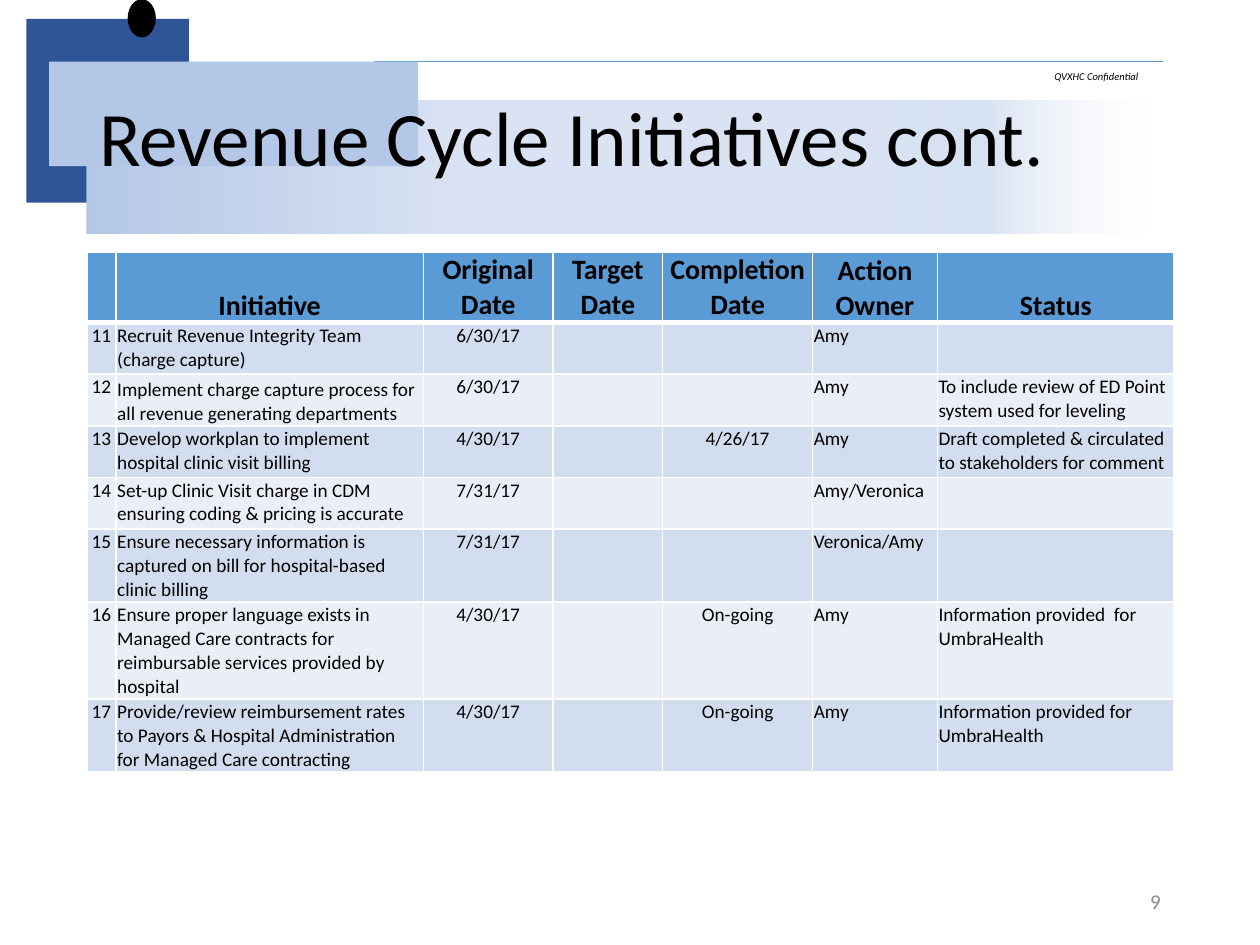
from typing import NamedTuple

from lxml import etree
from pptx import Presentation
from pptx.dml.color import RGBColor
from pptx.enum.shapes import MSO_CONNECTOR, MSO_SHAPE
from pptx.enum.text import MSO_ANCHOR, PP_ALIGN
from pptx.oxml import parse_xml
from pptx.oxml.ns import nsdecls, qn
from pptx.util import Inches, Pt

RECT, OVAL = MSO_SHAPE.RECTANGLE, MSO_SHAPE.OVAL
LEFT, CENTER, RIGHT = PP_ALIGN.LEFT, PP_ALIGN.CENTER, PP_ALIGN.RIGHT
TOP, MIDDLE, BOTTOM = MSO_ANCHOR.TOP, MSO_ANCHOR.MIDDLE, MSO_ANCHOR.BOTTOM

FONT = "Calibri"
COLORS = {
    "black": "000000", "white": "FFFFFF", "navy": "2F5597", "periwinkle": "B4C7E7",
    "pale": "DAE3F3", "mist": "D6E1F2", "header": "5B9BD5",
    "band_dark": "D2DEEF", "band_light": "EAEFF7", "gray": "8C8C8C",
}
# Position in percent, colour, opacity in percent
BANNER_STOPS = [(0, "white", 0), (17, "mist", 100), (39, "pale", 100),
                (65, "pale", 100), (100, "periwinkle", 100)]


class Block(NamedTuple):
    kind: MSO_SHAPE
    box: tuple[float, float, float, float]
    color: str


class Label(NamedTuple):
    text: str
    box: tuple[float, float, float, float]
    size: float
    color: str = "black"
    align: PP_ALIGN = LEFT
    anchor: MSO_ANCHOR = TOP
    italic: bool = False
    spacing: float = 1.0


class Column(NamedTuple):
    title: str
    width: float
    align: PP_ALIGN
    title_anchor: MSO_ANCHOR


class Initiative(NamedTuple):
    number: str
    name: str
    original: str
    target: str
    completion: str
    owner: str
    status: str


NAVY_SQUARE = Block(RECT, (0.21, 0.15, 1.29, 1.46), "navy")
DOT = Block(OVAL, (1.02, 0, 0.21, 0.29), "black")
BANNER = Block(RECT, (0.69, 0.8, 8.57, 1.05), "pale")
OVERLAY = Block(RECT, (0.39, 0.49, 2.93, 0.83), "periwinkle")

LABELS = [
    Label("QVXHC Confidential", (8.27, 0.5, 1.05, 0.33), 6, italic=True, spacing=1.07),
    Label("Revenue Cycle Initiatives cont.", (0.69, 0.4, 8.62, 1.45), 44,
          anchor=MIDDLE, spacing=0.9),
    Label("9", (7.06, 6.95, 2.25, 0.4), 12, "gray", RIGHT, MIDDLE),
]
COLUMNS = [
    Column("", 0.23, CENTER, TOP),
    Column("Initiative", 2.44, LEFT, BOTTOM),
    Column("Original Date", 1.03, CENTER, TOP),
    Column("Target Date", 0.87, CENTER, TOP),
    Column("Completion Date", 1.19, CENTER, TOP),
    Column("Action Owner", 0.99, LEFT, BOTTOM),
    Column("Status", 1.88, LEFT, BOTTOM),
]
ROW_HEIGHTS = [0.56, 0.41, 0.41, 0.41, 0.41, 0.58, 0.77, 0.58]
INITIATIVES = [
    Initiative("11", "Recruit Revenue Integrity Team (charge capture)",
               "6/30/17", "", "", "Amy", ""),
    Initiative("12", "Implement charge capture process for all revenue generating departments",
               "6/30/17", "", "", "Amy",
               "To include review of ED Point system used for leveling"),
    Initiative("13", "Develop workplan to implement hospital clinic visit billing",
               "4/30/17", "", "4/26/17", "Amy",
               "Draft completed & circulated to stakeholders for comment"),
    Initiative("14", "Set-up Clinic Visit charge in CDM ensuring coding & pricing is accurate",
               "7/31/17", "", "", "Amy/Veronica", ""),
    Initiative("15", "Ensure necessary information is captured on bill for hospital-based "
               "clinic billing", "7/31/17", "", "", "Veronica/Amy", ""),
    Initiative("16", "Ensure proper language exists in Managed Care contracts for "
               "reimbursable services provided by hospital",
               "4/30/17", "", "On-going", "Amy", "Information provided  for UmbraHealth"),
    Initiative("17", "Provide/review reimbursement rates to Payors & Hospital Administration "
               "for Managed Care contracting",
               "4/30/17", "", "On-going", "Amy", "Information provided for UmbraHealth"),
]


def rgb(name: str) -> RGBColor:
    return RGBColor.from_string(COLORS[name])


def style_paragraph(p, size: float, color: str, align: PP_ALIGN) -> None:
    p.alignment = align
    p.font.name = FONT
    p.font.size = Pt(size)
    p.font.color.rgb = rgb(color)


def add_block(slide, block: Block):
    s = slide.shapes.add_shape(block.kind, *map(Inches, block.box))
    s.shadow.inherit = False
    s.fill.solid()
    s.fill.fore_color.rgb = rgb(block.color)
    s.line.fill.background()
    return s


def fade_banner(s) -> None:
    """Replace the solid fill by one that fades out towards the right."""
    stops = "".join(
        f'<a:gs pos="{pos * 1000}"><a:srgbClr val="{COLORS[color]}">'
        f'<a:alpha val="{opacity * 1000}"/></a:srgbClr></a:gs>'
        for pos, color, opacity in BANNER_STOPS)
    gradient = parse_xml(f'<a:gradFill {nsdecls("a")}><a:gsLst>{stops}</a:gsLst>'
                         '<a:lin ang="10800000" scaled="0"/></a:gradFill>')
    props = s._element.spPr
    props.replace(props.find(qn("a:solidFill")), gradient)


def add_rule(slide) -> None:
    s = slide.shapes.add_connector(MSO_CONNECTOR.STRAIGHT, Inches(2.97), Inches(0.49),
                                   Inches(9.23), Inches(0.49))
    s.line.color.rgb = rgb("header")
    s.line.width = Pt(0.5)
    etree.SubElement(s._element.spPr, qn("a:effectLst"))


def add_label(slide, label: Label) -> None:
    tf = slide.shapes.add_textbox(*map(Inches, label.box)).text_frame
    tf.word_wrap = True
    tf.vertical_anchor = label.anchor
    p = tf.paragraphs[0]
    p.text = label.text
    p.line_spacing = label.spacing
    style_paragraph(p, label.size, label.color, label.align)
    p.font.italic = label.italic


def set_borders(cell, bottom: float) -> None:
    """White edges; they must stand before the fill in the cell properties."""
    edges = {"lnL": 1, "lnR": 1, "lnT": 1, "lnB": bottom}
    for i, (tag, width) in enumerate(edges.items()):
        cell._tc.get_or_add_tcPr().insert(i, parse_xml(
            f'<a:{tag} {nsdecls("a")} w="{Pt(width)}"><a:solidFill>'
            f'<a:srgbClr val="{COLORS["white"]}"/></a:solidFill></a:{tag}>'))


def fill_cell(cell, text: str, fill: str, size: float, align: PP_ALIGN,
              anchor: MSO_ANCHOR, header: bool) -> None:
    cell.fill.solid()
    cell.fill.fore_color.rgb = rgb(fill)
    cell.margin_left = cell.margin_right = cell.margin_top = Inches(0.01)
    cell.margin_bottom = 0
    cell.vertical_anchor = anchor
    p = cell.text_frame.paragraphs[0]
    p.text = text
    style_paragraph(p, size, "black", align)
    p.font.bold = header
    set_borders(cell, 3 if header else 1)


def add_initiatives(slide) -> None:
    width = sum(c.width for c in COLUMNS)
    table = slide.shapes.add_table(len(ROW_HEIGHTS), len(COLUMNS), Inches(0.69), Inches(2),
                                   Inches(width), Inches(sum(ROW_HEIGHTS))).table
    for row, height in zip(table.rows, ROW_HEIGHTS):
        row.height = Inches(height)
    for c, column in enumerate(COLUMNS):
        table.columns[c].width = Inches(column.width)
        fill_cell(table.cell(0, c), column.title, "header", 16, CENTER,
                  column.title_anchor, True)
        for r, item in enumerate(INITIATIVES, 1):
            fill = "band_dark" if r % 2 else "band_light"
            anchor = BOTTOM if (item.number, c) == ("12", 1) else TOP
            fill_cell(table.cell(r, c), item[c], fill, 11, column.align, anchor, False)


def main() -> None:
    prs = Presentation()
    prs.slide_width, prs.slide_height = Inches(10), Inches(7.5)
    slide = prs.slides.add_slide(prs.slide_layouts[6])
    add_rule(slide)
    add_block(slide, NAVY_SQUARE)
    dot = add_block(slide, DOT)
    dot.line.color.rgb = rgb("black")
    dot.line.width = Pt(1)
    fade_banner(add_block(slide, BANNER))
    add_block(slide, OVERLAY)
    for label in LABELS:
        add_label(slide, label)
    add_initiatives(slide)
    prs.save("out.pptx")


if __name__ == "__main__":
    main()
